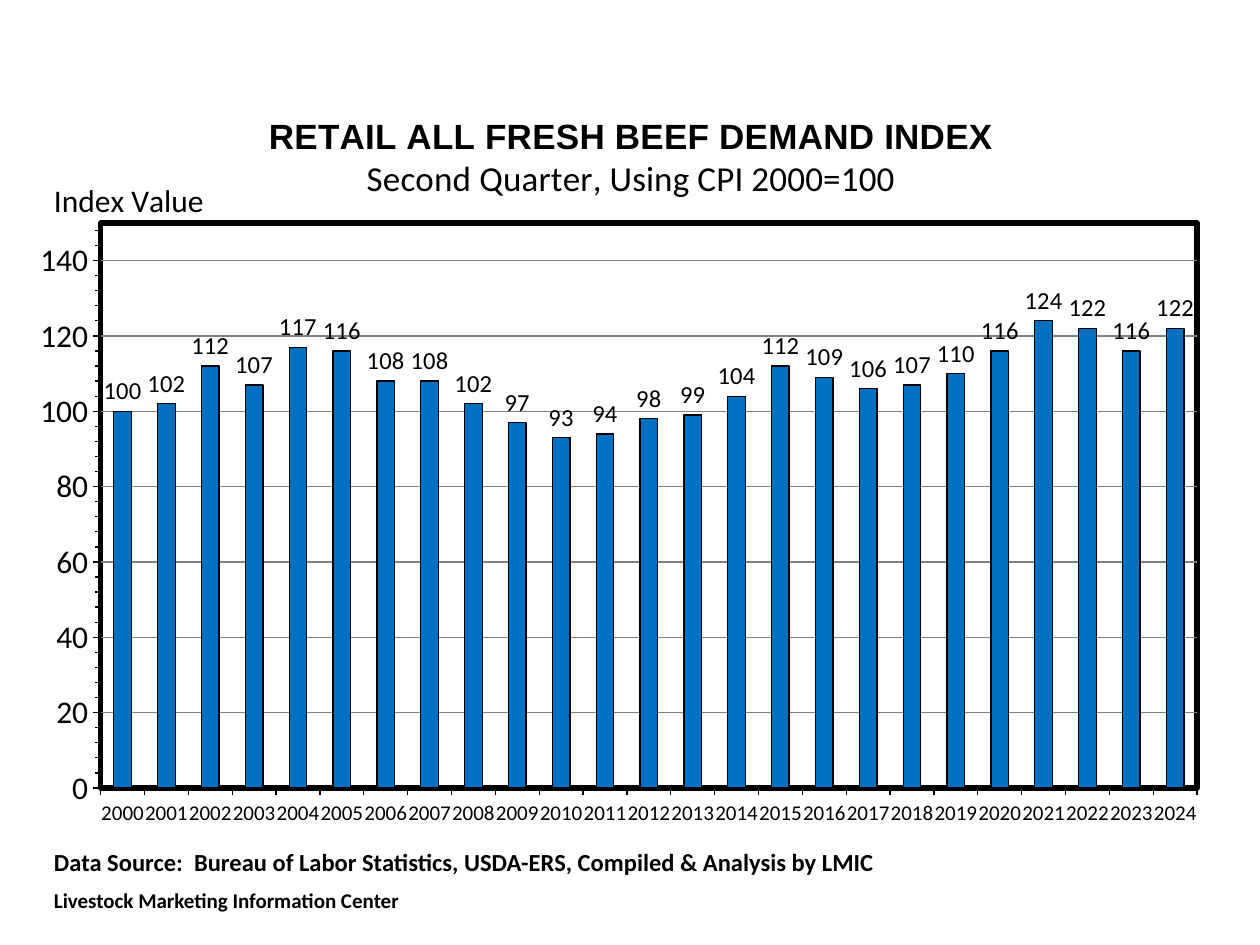
import pptx
import pptx.chart.data
import pptx.dml.color
import pptx.enum.chart
import pptx.enum.text
import pptx.oxml
import pptx.oxml.ns
import pptx.util

BLACK = pptx.dml.color.RGBColor(0x00, 0x00, 0x00)
WHITE = pptx.dml.color.RGBColor(0xFF, 0xFF, 0xFF)
GRAY = pptx.dml.color.RGBColor(0x80, 0x80, 0x80)
BLUE = pptx.dml.color.RGBColor(0x00, 0x70, 0xC0)

YEARS = [str(year) for year in range(2000, 2025)]
DEMAND_INDEX = [100, 102, 112, 107, 117, 116, 108, 108, 102, 97, 93, 94, 98,
                99, 104, 112, 109, 106, 107, 110, 116, 124, 122, 116, 122]


class SlideBuilder:
    font = "Calibri"

    def __init__(self, prs):
        self.prs = prs
        self.slide = prs.slides.add_slide(prs.slide_layouts[6])

    def box(self, x, y, w, h):
        """Turn shares of the slide's size into lengths."""
        width, height = self.prs.slide_width, self.prs.slide_height
        return [int(v) for v in (x * width, y * height, w * width, h * height)]

    def style(self, font, size, bold=False, name=None):
        font.name = name or self.font
        font.size = pptx.util.Pt(size)
        font.bold = bold
        font.color.rgb = BLACK

    def line(self, line, color=BLACK, width=0.75):
        line.color.rgb = color
        line.width = pptx.util.Pt(width)

    def heading(self, title, lines):
        """Fill a chart or axis title with (text, size, bold, font) lines."""
        tf = title.text_frame
        for i, (text, *style) in enumerate(lines):
            p = tf.add_paragraph() if i else tf.paragraphs[0]
            r = p.add_run()
            r.text = text
            self.style(r.font, *style)

    def place(self, parent, inner=False, **shares):
        """Set a manual layout, in shares of the chart's size."""
        marks = {"layoutTarget": "inner"} if inner else {}
        marks.update(xMode="edge", yMode="edge", **shares)
        items = "".join(f'<c:{k} val="{v}"/>' for k, v in marks.items())
        for old in parent.findall(pptx.oxml.ns.qn("c:layout")):
            parent.remove(old)
        layout = pptx.oxml.parse_xml(
            f'<c:layout {pptx.oxml.ns.nsdecls("c")}>'
            f'<c:manualLayout>{items}</c:manualLayout></c:layout>')
        text = parent.find(pptx.oxml.ns.qn("c:tx"))
        if text is None:
            parent.insert(0, layout)
        else:
            text.addnext(layout)

    def frame_plot(self, plot_area):
        sp_pr = pptx.oxml.parse_xml(
            f'<c:spPr {pptx.oxml.ns.nsdecls("c", "a")}>'
            f'<a:solidFill><a:srgbClr val="{WHITE}"/></a:solidFill>'
            f'<a:ln w="{pptx.util.Pt(3)}"><a:solidFill>'
            f'<a:srgbClr val="{BLACK}"/></a:solidFill></a:ln></c:spPr>')
        plot_area.append(sp_pr)

    def column_chart(self, share, categories, values, title, axis_title):
        data = pptx.chart.data.CategoryChartData()
        data.categories = categories
        data.add_series("Series 1", values)
        chart = self.slide.shapes.add_chart(
            pptx.enum.chart.XL_CHART_TYPE.COLUMN_CLUSTERED,
            *self.box(*share), data).chart
        self.style(chart.font, 18)
        chart.has_legend = False
        self.heading(chart.chart_title, title)
        chart.chart_title.include_in_layout = False
        self.place(chart.chart_title._element, x=0.2, y=0.035)

        outside = pptx.enum.chart.XL_TICK_MARK.OUTSIDE
        for axis, size in ((chart.category_axis, 12), (chart.value_axis, 18)):
            self.style(axis.tick_labels.font, size)
            self.line(axis.format.line)
            axis.major_tick_mark = outside
        axis = chart.value_axis
        axis.minor_tick_mark = outside
        axis.minimum_scale, axis.maximum_scale = 0, 150
        axis.major_unit, axis.minor_unit = 20, 4
        axis.has_major_gridlines = True
        self.line(axis.major_gridlines.format.line, GRAY)
        self.heading(axis.axis_title, [axis_title])
        body = axis.axis_title.text_frame._txBody.bodyPr
        body.set("rot", "0")
        body.set("vert", "horz")
        self.place(axis.axis_title._element, x=0.022, y=0.118)

        plot = chart.plots[0]
        plot.gap_width = 150
        plot.vary_by_categories = False
        series = plot.series[0]
        series.format.fill.solid()
        series.format.fill.fore_color.rgb = BLUE
        self.line(series.format.line)
        labels = series.data_labels
        labels.show_value = True
        labels.position = pptx.enum.chart.XL_LABEL_POSITION.OUTSIDE_END
        labels.number_format = "#,##0"
        labels.number_format_is_linked = False
        self.style(labels.font, 14)

        plot_area = chart._chartSpace.chart.plotArea
        self.place(plot_area, inner=True, x=0.065, y=0.185, w=0.9, h=0.758)
        self.frame_plot(plot_area)

    def source_lines(self, share, lines):
        """Add a text box of bold (text, size) paragraphs."""
        tf = self.slide.shapes.add_textbox(*self.box(*share)).text_frame
        tf.word_wrap = True
        tf.auto_size = pptx.enum.text.MSO_AUTO_SIZE.SHAPE_TO_FIT_TEXT
        for i, (text, size) in enumerate(lines):
            p = tf.add_paragraph() if i else tf.paragraphs[0]
            if i:
                p.space_before = pptx.util.Pt(size / 2)
            r = p.add_run()
            r.text = text
            self.style(r.font, size, bold=True)


def main():
    prs = pptx.Presentation()
    prs.slide_width = pptx.util.Inches(10)
    prs.slide_height = pptx.util.Inches(7.5)
    s = SlideBuilder(prs)
    s.column_chart(
        (0.017, 0.09, 0.967, 0.789), YEARS, DEMAND_INDEX,
        title=[("RETAIL ALL FRESH BEEF DEMAND INDEX", 20, True, "Arial"),
               ("Second Quarter, Using CPI 2000=100", 20)],
        axis_title=("Index Value", 18))
    s.source_lines(
        (0.033, 0.89, 0.691, 0.085),
        [("Data Source:  Bureau of Labor Statistics, USDA-ERS, "
          "Compiled & Analysis by LMIC", 14),
         ("Livestock Marketing Information Center", 12)])
    prs.save("out.pptx")


if __name__ == "__main__":
    main()
